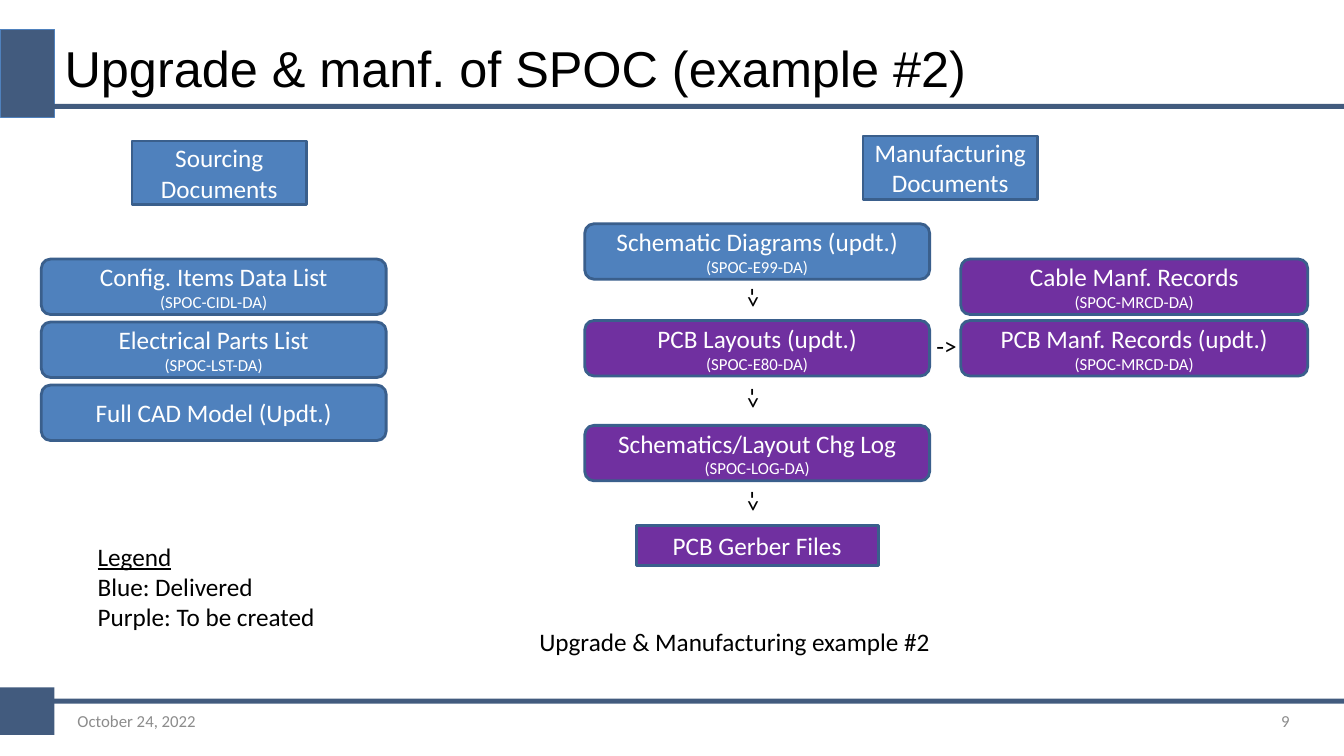
from pptx import Presentation
from pptx.dml.color import RGBColor
from pptx.enum.shapes import MSO_SHAPE
from pptx.enum.text import MSO_ANCHOR, PP_ALIGN
from pptx.util import Inches, Pt

NAVY = RGBColor(0x42, 0x5B, 0x7E)
BLUE = RGBColor(0x4F, 0x81, 0xBD)
PURPLE = RGBColor(0x70, 0x30, 0xA0)
BORDER = RGBColor(0x3A, 0x5F, 0x8C)
GREY = RGBColor(0x8C, 0x8C, 0x8C)
BLACK = RGBColor(0, 0, 0)
WHITE = RGBColor(0xFF, 0xFF, 0xFF)

RECTANGLE = MSO_SHAPE.RECTANGLE
PROCESS = MSO_SHAPE.FLOWCHART_PROCESS
ROUNDED = MSO_SHAPE.FLOWCHART_ALTERNATE_PROCESS
LEFT, CENTER, RIGHT = PP_ALIGN.LEFT, PP_ALIGN.CENTER, PP_ALIGN.RIGHT
TOP, MIDDLE = MSO_ANCHOR.TOP, MSO_ANCHOR.MIDDLE

SLIDE_WIDTH, SLIDE_HEIGHT = 13.33, 7.5
TAB_WIDTH = 0.54
CARD_WIDTH, CARD_HEIGHT = 3.42, 0.55
HEADER_WIDTH, HEADER_HEIGHT = 1.73, 0.63
ARROW_WIDTH, TEXT_HEIGHT = 0.46, 0.4
TITLE_LAYOUT = 5


def fill_text(frame, lines, color, align=LEFT, anchor=TOP):
    """Write (text, size) lines, one paragraph each."""
    frame.word_wrap = True
    frame.vertical_anchor = anchor
    for index, (text, size) in enumerate(lines):
        para = frame.paragraphs[0] if index == 0 else frame.add_paragraph()
        para.text = text
        para.alignment = align
        para.font.name = "Calibri"
        para.font.size = Pt(size)
        para.font.color.rgb = color


def add_block(page, preset, box, fill, border=None, border_width=2):
    block = page.shapes.add_shape(preset, *map(Inches, box))
    block.shadow.inherit = False
    block.fill.solid()
    block.fill.fore_color.rgb = fill
    if border is None:
        block.line.fill.background()
    else:
        block.line.color.rgb = border
        block.line.width = Pt(border_width)
    return block


def add_card(page, preset, box, fill, name, code=None):
    lines = [(name, 18)] + ([(code, 12)] if code else [])
    card = add_block(page, preset, box, fill, BORDER)
    fill_text(card.text_frame, lines, WHITE, CENTER, MIDDLE)


def add_text(page, box, lines, color=BLACK, align=LEFT, anchor=TOP):
    text_box = page.shapes.add_textbox(*map(Inches, box))
    fill_text(text_box.text_frame, lines, color, align, anchor)
    return text_box


def add_arrow(page, left, top, rotation=0):
    arrow = add_text(page, (left, top, ARROW_WIDTH, TEXT_HEIGHT), [("->", 18)])
    arrow.rotation = rotation


def add_stack(page, left, top, width, pitch, fill, cards):
    for row, card in enumerate(cards):
        box = (left, top + row * pitch, width, CARD_HEIGHT)
        add_card(page, ROUNDED, box, fill, *card)


def add_title_band(page, top):
    rule_left = 0.37
    add_block(page, RECTANGLE, (0, top, TAB_WIDTH, 0.87), NAVY, BLUE, 0.5)
    add_block(page, RECTANGLE,
              (rule_left, top + 0.74, SLIDE_WIDTH - rule_left, 0.05), NAVY)
    title = page.shapes.title
    title.left, title.top = Inches(TAB_WIDTH), Inches(top + 0.01)
    title.width, title.height = Inches(10.3), Inches(0.73)
    title.text_frame.text = "Upgrade & manf. of SPOC (example #2)"
    title.text_frame.vertical_anchor = MIDDLE
    para = title.text_frame.paragraphs[0]
    para.alignment = LEFT
    para.font.name = "Arial"
    para.font.size = Pt(36)
    para.font.color.rgb = BLACK


def add_footer_band(page, top):
    rule_left, margin, width = 0.37, 0.67, 3.11
    add_block(page, RECTANGLE, (0, top, TAB_WIDTH, 0.47), NAVY)
    add_block(page, RECTANGLE,
              (rule_left, top + 0.11, SLIDE_WIDTH - rule_left, 0.05), NAVY)
    number_left = SLIDE_WIDTH - 0.44 - width
    for left, text, align in ((margin, "October 24, 2022", LEFT),
                              (number_left, "9", RIGHT)):
        add_text(page, (left, top + 0.13, width, TEXT_HEIGHT),
                 [(text, 12)], GREY, align, MIDDLE)


def add_sourcing(page, left, top):
    add_card(page, PROCESS, (left + 0.9, top, HEADER_WIDTH, HEADER_HEIGHT),
             BLUE, "Sourcing Documents")
    add_stack(page, left, top + 1.17, CARD_WIDTH, 0.625, BLUE, [
        ("Config. Items Data List", "(SPOC-CIDL-DA)"),
        ("Electrical Parts List", "(SPOC-LST-DA)"),
        ("Full CAD Model (Updt.)",),
    ])


def add_manufacturing(page, left, top):
    add_card(page, PROCESS, (left + 2.76, top, HEADER_WIDTH, HEADER_HEIGHT),
             BLUE, "Manufacturing Documents")
    chain = [
        (0.87, BLUE, "Schematic Diagrams (updt.)", "(SPOC-E99-DA)"),
        (1.83, PURPLE, "PCB Layouts (updt.)", "(SPOC-E80-DA)"),
        (2.87, PURPLE, "Schematics/Layout Chg Log", "(SPOC-LOG-DA)"),
    ]
    for offset, fill, name, code in chain:
        box = (left, top + offset, CARD_WIDTH, CARD_HEIGHT)
        add_card(page, ROUNDED, box, fill, name, code)
    gerber_width = 2.4
    gerber_left = left + (CARD_WIDTH - gerber_width) / 2
    add_card(page, PROCESS, (gerber_left, top + 3.86, gerber_width, 0.4),
             PURPLE, "PCB Gerber Files")
    for offset in (1.44, 2.44, 3.46):
        add_arrow(page, left + 1.46, top + offset, 90)

    add_stack(page, left + 3.73, top + 1.22, 3.44, 0.61, PURPLE, [
        ("Cable Manf. Records", "(SPOC-MRCD-DA)"),
        ("PCB Manf. Records (updt.)", "(SPOC-MRCD-DA)"),
    ])
    add_arrow(page, left + 3.39, top + 1.88)


def add_legend(page, left, top):
    lines = ("Legend", "Blue: Delivered", "Purple: To be created")
    legend = add_text(page, (left, top, 2.73, 1.01),
                      [(line, 18) for line in lines])
    legend.text_frame.paragraphs[0].font.underline = True


def main():
    deck = Presentation()
    deck.slide_width = Inches(SLIDE_WIDTH)
    deck.slide_height = Inches(SLIDE_HEIGHT)
    page = deck.slides.add_slide(deck.slide_layouts[TITLE_LAYOUT])
    add_title_band(page, 0.29)
    add_footer_band(page, 6.82)
    add_sourcing(page, 0.41, 1.4)
    add_manufacturing(page, 5.8, 1.35)
    add_legend(page, 0.87, 5.32)
    add_text(page, (5.25, 6.16, 4.12, TEXT_HEIGHT),
             [("Upgrade & Manufacturing example #2", 18)])
    deck.save("out.pptx")


if __name__ == "__main__":
    main()
